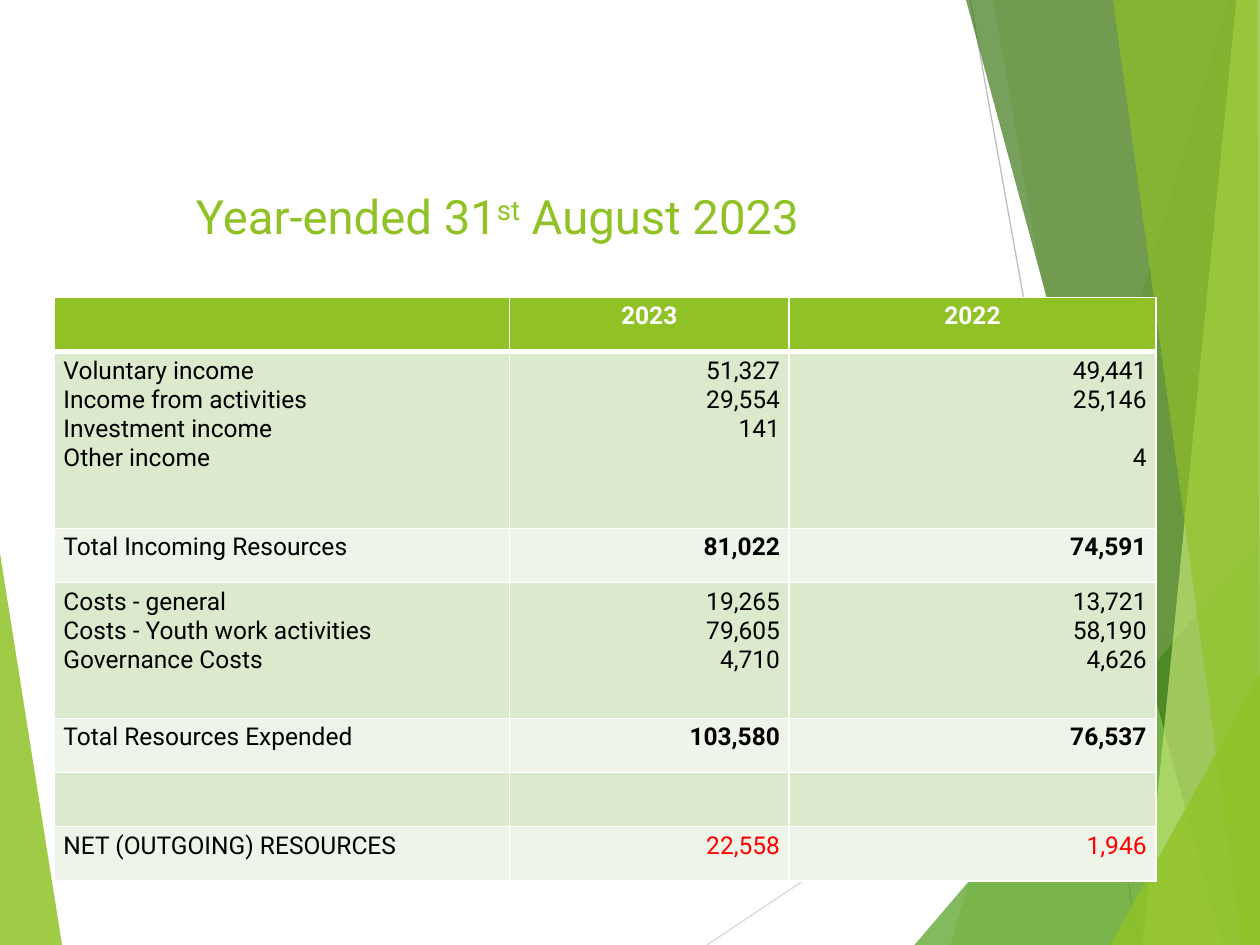
from lxml import etree
from pptx import Presentation
from pptx import util as u
from pptx.dml import color
from pptx.enum import text
from pptx.oxml import ns

FONT = "Roboto"
GREEN, WHITE, BLACK, RED = "90C226", "FFFFFF", "000000", "FF0000"
BANDS = ["DBE9CD", "EEF4E8"]
WIDTH, HEIGHT = 720, 540
LINE_HEIGHT = 16.5

FACETS = [
    ([(702, 0), (543, HEIGHT), (WIDTH, HEIGHT), (WIDTH, 0)], GREEN, 30),
    ([(567.5, 0), (661.5, HEIGHT), (WIDTH, HEIGHT), (WIDTH, 0)], GREEN, 20),
    ([(522.5, HEIGHT), (WIDTH, 309), (WIDTH, HEIGHT)], "54A021", 72),
    ([(552, 0), (698.5, HEIGHT), (WIDTH, HEIGHT), (WIDTH, 0)], "3F7819", 70),
    ([(706.5, 0), (653, HEIGHT), (WIDTH, HEIGHT), (WIDTH, 0)], "C0E474", 70),
    ([(636, 0), (710, HEIGHT), (WIDTH, HEIGHT), (718.5, 0)], GREEN, 65),
    ([(634.5, HEIGHT), (WIDTH, 385), (WIDTH, HEIGHT)], GREEN, 80),
]

COLUMN_WIDTHS = [260, 160, 209.5]
ROWS = [
    (31, ["", "2023", "2022"]),
    (101, ["Voluntary income\nIncome from activities\nInvestment income\nOther income",
           "51,327\n29,554\n141", "49,441\n25,146\n\n4"]),
    (31, ["Total Incoming Resources", "81,022", "74,591"]),
    (77.5, ["Costs - general\nCosts - Youth work activities\vGovernance Costs",
            "19,265\n79,605\n4,710", "13,721\n58,190\n4,626"]),
    (31, ["Total Resources Expended", "103,580", "76,537"]),
    (31, ["", "", ""]),
    (31, ["NET (OUTGOING) RESOURCES", "22,558", "1,946"]),
]
TOTAL_ROWS = (2, 4)
NET_ROW = 6


def rgb(value):
    return color.RGBColor.from_string(value)


def set_font(paragraph, size, value, bold=False):
    font = paragraph.font
    font.name, font.size, font.bold = FONT, u.Pt(size), bold
    font.color.rgb = rgb(value)


def add_facet(slide, points, value, opacity):
    corners = [(u.Pt(x), u.Pt(y)) for x, y in points]
    builder = slide.shapes.build_freeform(*corners[0])
    builder.add_line_segments(corners[1:])
    shape = builder.convert_to_shape()
    shape.shadow.inherit = False
    shape.line.fill.background()
    shape.fill.solid()
    shape.fill.fore_color.rgb = rgb(value)
    fill_color = shape.fill._xPr.find(".//" + ns.qn("a:srgbClr"))
    etree.SubElement(fill_color, ns.qn("a:alpha"), val=str(opacity * 1000))


def add_line(slide, start, end, value):
    points = [u.Pt(length) for length in (*start, *end)]
    connector = slide.shapes.add_connector(1, *points)
    connector.line.color.rgb = rgb(value)
    connector.line.width = u.Pt(0.75)
    etree.SubElement(connector._element.spPr, ns.qn("a:effectLst"))


def add_title(slide):
    box = slide.shapes.add_textbox(u.Pt(105), u.Pt(101.5), u.Pt(404), u.Pt(50.5))
    frame = box.text_frame
    frame.word_wrap = True
    frame.margin_left = frame.margin_right = u.Pt(7)
    frame.margin_top = u.Pt(5.5)
    paragraph = frame.paragraphs[0]
    for words in ("Year-ended 31", "st", " August 2023"):
        run = paragraph.add_run()
        run.text = words
        if words == "st":
            run._r.get_or_add_rPr().set("baseline", "30000")
    set_font(paragraph, 27, GREEN)


def set_borders(cell, bottom_width):
    properties = cell._tc.get_or_add_tcPr()
    widths = {"a:lnL": 1, "a:lnR": 1, "a:lnT": 1, "a:lnB": bottom_width}
    for index, (tag, width) in enumerate(widths.items()):
        border = etree.Element(ns.qn(tag), w=str(u.Pt(width)))
        fill = etree.SubElement(border, ns.qn("a:solidFill"))
        etree.SubElement(fill, ns.qn("a:srgbClr"), val=WHITE)
        properties.insert(index, border)


def fill_cell(cell, words, fill, value, bold, alignment):
    cell.fill.solid()
    cell.fill.fore_color.rgb = rgb(fill)
    cell.margin_left = cell.margin_right = u.Pt(5.25)
    cell.margin_top = cell.margin_bottom = u.Pt(2.65)
    frame = cell.text_frame
    gap = 0
    for index, line in enumerate(words.split("\n")):
        if index and not line:
            gap += LINE_HEIGHT
            continue
        paragraph = frame.add_paragraph() if index else frame.paragraphs[0]
        paragraph.text = line
        paragraph.alignment = alignment
        if gap:
            paragraph.space_before = u.Pt(gap)
            gap = 0
        set_font(paragraph, 14, value, bold)


def add_accounts(slide):
    heights = [height for height, _ in ROWS]
    frame = slide.shapes.add_table(
        len(ROWS), len(COLUMN_WIDTHS), u.Pt(31), u.Pt(170),
        u.Pt(sum(COLUMN_WIDTHS)), u.Pt(sum(heights)))
    table = frame.table
    for column, width in zip(table.columns, COLUMN_WIDTHS):
        column.width = u.Pt(width)
    align = text.PP_ALIGN
    for row_index, (height, entries) in enumerate(ROWS):
        table.rows[row_index].height = u.Pt(height)
        header = row_index == 0
        for column_index, words in enumerate(entries):
            figure = column_index > 0
            value = WHITE if header else RED if figure and row_index == NET_ROW else BLACK
            bold = header or (figure and row_index in TOTAL_ROWS)
            fill = GREEN if header else BANDS[(row_index - 1) % 2]
            alignment = align.CENTER if header else align.RIGHT if figure else align.LEFT
            cell = table.cell(row_index, column_index)
            fill_cell(cell, words, fill, value, bold, alignment)
            set_borders(cell, 3 if header else 1)


def main():
    presentation = Presentation()
    presentation.slide_width, presentation.slide_height = u.Pt(WIDTH), u.Pt(HEIGHT)
    slide = presentation.slides.add_slide(presentation.slide_layouts[6])
    add_facet(slide, [(0, 316), (35.5, HEIGHT), (0, HEIGHT)], GREEN, 85)
    add_line(slide, (404, HEIGHT), (WIDTH, 329), "D9D9D9")
    add_line(slide, (554.5, 0), (651, HEIGHT), "BFBFBF")
    for points, value, opacity in FACETS:
        add_facet(slide, points, value, opacity)
    add_title(slide)
    add_accounts(slide)
    presentation.save("out.pptx")


if __name__ == "__main__":
    main()
